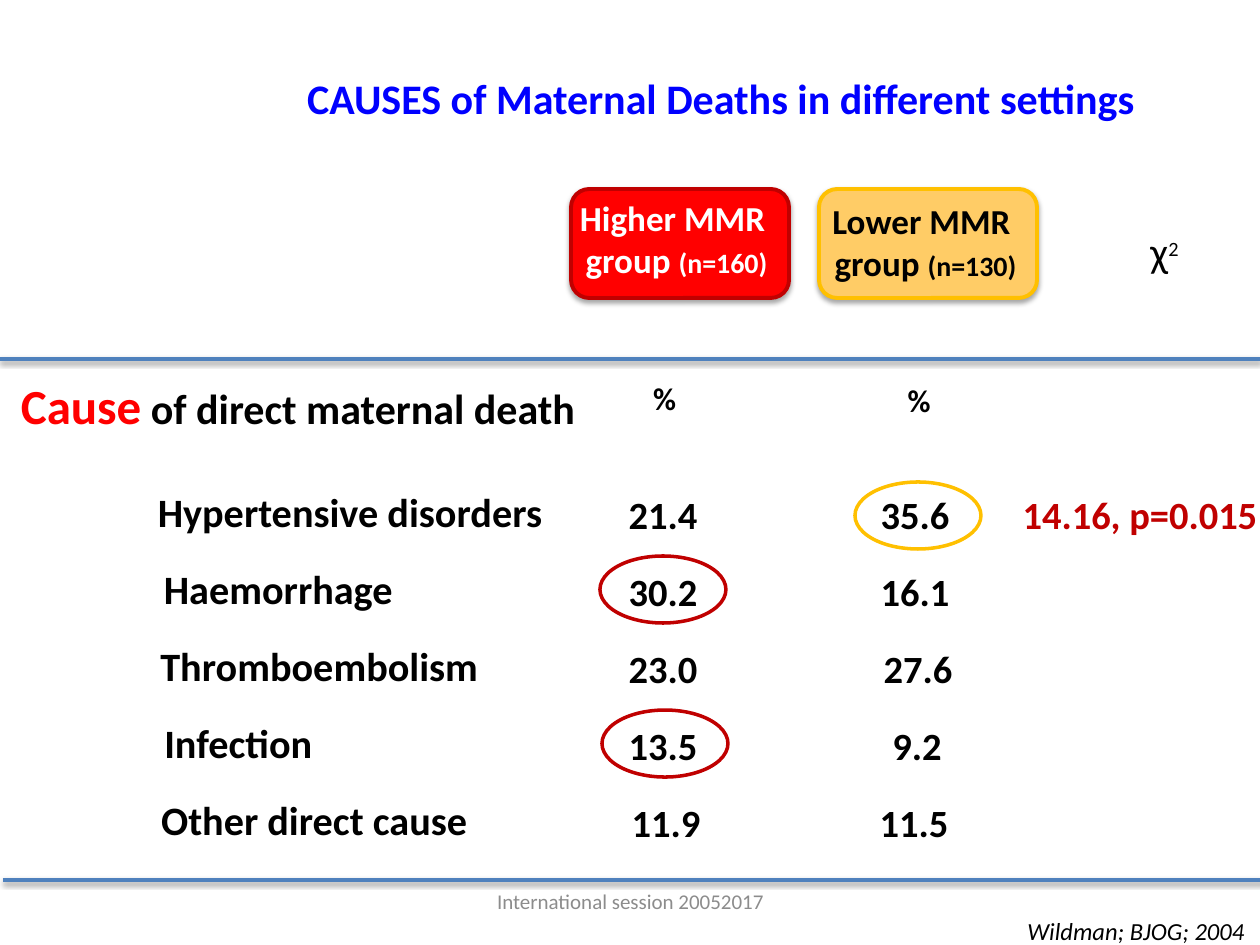
from lxml.etree import SubElement
from pptx import Presentation
from pptx.dml.color import RGBColor
from pptx.enum.shapes import MSO_CONNECTOR as Connector, MSO_SHAPE as Shape
from pptx.enum.text import MSO_ANCHOR as Anchor, MSO_AUTO_SIZE as AutoSize, PP_ALIGN as Align
from pptx.oxml.ns import qn
from pptx.util import Pt

PX = 914400 / 126
BLACK, WHITE, RED, DARK_RED = "000000", "FFFFFF", "FF0000", "C00000"
AMBER, BLUE = "FFC000", "4F81BD"
color = RGBColor.from_string


def add_text(box, paragraphs, wrap=False, grow=True):
    textbox = slide.shapes.add_textbox(*[round(n * PX) for n in box])
    frame = textbox.text_frame
    frame.word_wrap = wrap
    frame.auto_size = AutoSize.SHAPE_TO_FIT_TEXT if grow else AutoSize.NONE
    frame.vertical_anchor = Anchor.TOP if grow else Anchor.MIDDLE
    for index, runs in enumerate(paragraphs):
        paragraph = frame.add_paragraph() if index else frame.paragraphs[0]
        paragraph.alignment = Align.CENTER
        for text, size, rgb, formats in runs:
            run = paragraph.add_run()
            run.text = text
            run.font.color.rgb = color(rgb)
            for name, value in {"name": "Calibri", "size": Pt(size), **formats}.items():
                setattr(run.font, name, value)
    return textbox


def add_shadow(properties, alpha, distance):
    effects = properties.find(qn("a:effectLst"))
    if effects is None:
        effects = SubElement(properties, qn("a:effectLst"))
    shadow = SubElement(effects, qn("a:outerShdw"), blurRad=str(Pt(3.1)),
                        dist=str(Pt(distance)), dir="5400000", rotWithShape="0")
    black = SubElement(shadow, qn("a:srgbClr"), val=BLACK)
    SubElement(black, qn("a:alpha"), val=str(alpha * 1000))


presentation = Presentation()
presentation.slide_width = round(1260 * PX)
presentation.slide_height = round(945 * PX)
slide = presentation.slides.add_slide(presentation.slide_layouts[6])
bold, plain = {"bold": True}, {}

groups = [
    (819, "FFCC66", AMBER, BLACK, (819, 193, 213, 97), "Lower MMR ", "(n=130)", False),
    (571, RED, DARK_RED, WHITE, (558, 190, 237, 97), "Higher MMR ", "(n=160)", True),
]
for left, fill, line, ink, box, heading, count, wrap in groups:
    card = slide.shapes.add_shape(
        Shape.ROUNDED_RECTANGLE, *[round(n * PX) for n in (left, 189, 218, 109)])
    card.fill.solid()
    card.fill.fore_color.rgb = color(fill)
    card.line.color.rgb = color(line)
    card.line.width = Pt(2.25)
    card.shadow.inherit = False
    add_shadow(card.element.spPr, 35, 1.8)
    add_text(box, [[(heading, 20, ink, bold)],
                   [("group ", 20, ink, bold), (count, 16, ink, bold)]], wrap)

add_text((174, 66, 1094, 64),
         [[("CAUSES of Maternal Deaths in different settings", 24, "0000FF", bold)]], True)
add_text((5, 369, 586, 72),
         [[("Cause", 28, RED, bold), (" of direct maternal death", 24, BLACK, bold)]])
chi_square = add_text((1137, 219, 55, 64), [[("χ", 24, BLACK, plain), ("2", 20, BLACK, plain)]])
chi_square.text_frame.paragraphs[0].runs[1].font._element.set("baseline", "30000")

for left, top, width, label in [(640, 373, 49, "%"), (888, 375, 55, " %")]:
    add_text((left, top, width, 50), [[(label, 18, BLACK, bold)]])

causes = [
    (144, 413, "Hypertensive disorders", 616, "21.4", 868, "35.6"),
    (150, 257, "Haemorrhage", 616, "30.2", 868, "16.1"),
    (146, 347, "Thromboembolism", 616, "23.0", 871, "27.6"),
    (151, 175, "Infection", 616, "13.5", 870, "9.2"),
    (147, 335, "Other direct cause", 619, "11.9", 867, "11.5"),
]
for row, (left, width, cause, higher_left, higher, lower_left, lower) in enumerate(causes):
    top = 481 + 77 * row
    add_text((left, top, width, 62), [[(cause, 23, BLACK, bold)]])
    for value_left, value in [(higher_left, higher), (lower_left, lower)]:
        add_text((value_left, top + 4, 94, 59), [[(value, 22, BLACK, bold)]])

add_text((1009, 485, 262, 59), [[("14.16, p=0.015", 22, DARK_RED, bold)]])

for left, top, line in [(600, 556, DARK_RED), (602, 710, DARK_RED), (855, 482, AMBER)]:
    ring = slide.shapes.add_shape(Shape.OVAL, *[round(n * PX) for n in (left, top, 126, 67)])
    ring.fill.background()
    ring.line.color.rgb = color(line)
    ring.line.width = Pt(2)
    ring.shadow.inherit = False

for left, top in [(0, 359), (3, 880)]:
    rule = slide.shapes.add_connector(
        Connector.STRAIGHT, *[round(n * PX) for n in (left, top, left + 1260, top)])
    rule.line.color.rgb = color(BLUE)
    rule.line.width = Pt(2)
    add_shadow(rule._element.spPr, 38, 1.6)

add_text((1014, 910, 244, 43), [[("Wildman; BJOG; 2004", 14, BLACK, {"italic": True})]])
add_text((431, 876, 399, 50),
         [[("International session 20052017", 12, "8C8C8C", plain)]], True, False)

presentation.save("out.pptx")
